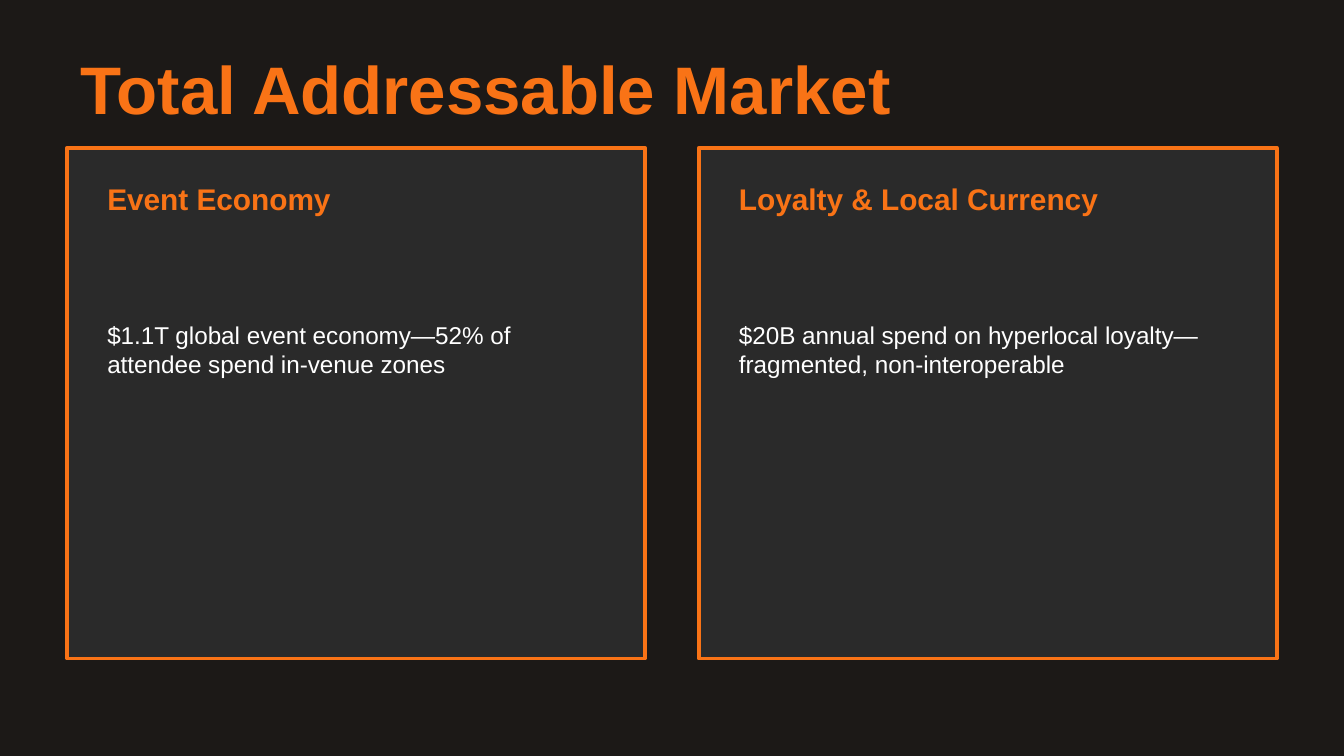
from dataclasses import dataclass

import pptx
import pptx.dml.color
import pptx.enum.shapes
import pptx.enum.text
import pptx.util

Inches = pptx.util.Inches
Pt = pptx.util.Pt

ORANGE, PANEL, DARK, WHITE = "F97316", "2A2A2A", "1C1917", "FFFFFF"

HEAD = {"size": Pt(36), "bold": True, "name": "Arial"}
LABEL = {"size": Pt(16), "bold": True, "name": "Arial"}
BODY = {"size": Pt(13), "bold": False, "name": "Arial"}


@dataclass
class Card:
    label: str
    body: str


CARDS = [
    Card("Event Economy",
         "$1.1T global event economy—52% of attendee spend in-venue zones"),
    Card("Loyalty & Local Currency",
         "$20B annual spend on hyperlocal loyalty—fragmented, non-interoperable"),
]
LEFT, TOP, WIDTH, HEIGHT = 0.5, 1.1, 4.3, 3.8
GAP, PAD = 0.4, 0.2


def paint(target, color: str) -> None:
    """Give a fill one solid colour."""
    target.solid()
    target.fore_color.rgb = pptx.dml.color.RGBColor.from_string(color)


def write(shape, text: str, style: dict, color: str) -> None:
    """Put styled, left-aligned text in a shape, centred in height."""
    frame = shape.text_frame
    frame.text = text
    frame.word_wrap = True
    frame.auto_size = pptx.enum.text.MSO_AUTO_SIZE.NONE
    frame.vertical_anchor = pptx.enum.text.MSO_ANCHOR.MIDDLE
    para = frame.paragraphs[0]
    para.alignment = pptx.enum.text.PP_ALIGN.LEFT
    font = para.runs[0].font
    for key, value in style.items():
        setattr(font, key, value)
    paint(font.fill, color)


def draw(slide, card: Card, left: float) -> None:
    """Draw a panel with its label and body text."""
    box = slide.shapes.add_shape(
        pptx.enum.shapes.MSO_SHAPE.RECTANGLE,
        Inches(left), Inches(TOP), Inches(WIDTH), Inches(HEIGHT))
    box.shadow.inherit = False
    paint(box.fill, PANEL)
    paint(box.line.fill, ORANGE)
    box.line.width = Pt(2)

    rows = [(card.label, 1.3, 0.35, LABEL, ORANGE),
            (card.body, 1.8, 1.6, BODY, WHITE)]
    for text, top, height, style, color in rows:
        area = slide.shapes.add_textbox(
            Inches(left + PAD), Inches(top),
            Inches(WIDTH - 2 * PAD), Inches(height))
        write(area, text, style, color)


def main() -> None:
    # Widescreen 16:9 slide
    deck = pptx.Presentation()
    deck.slide_width, deck.slide_height = Inches(10), Inches(10 * 9 / 16)
    slide = deck.slides.add_slide(deck.slide_layouts.get_by_name("Title Only"))
    paint(slide.background.fill, DARK)

    # Title
    title = slide.shapes.title
    title.left, title.top = Inches(LEFT), Inches(0.4)
    title.width, title.height = Inches(9), Inches(0.5)
    write(title, "Total Addressable Market", HEAD, ORANGE)

    # Market cards
    for i, card in enumerate(CARDS):
        draw(slide, card, LEFT + i * (WIDTH + GAP))

    deck.save("out.pptx")


if __name__ == "__main__":
    main()
